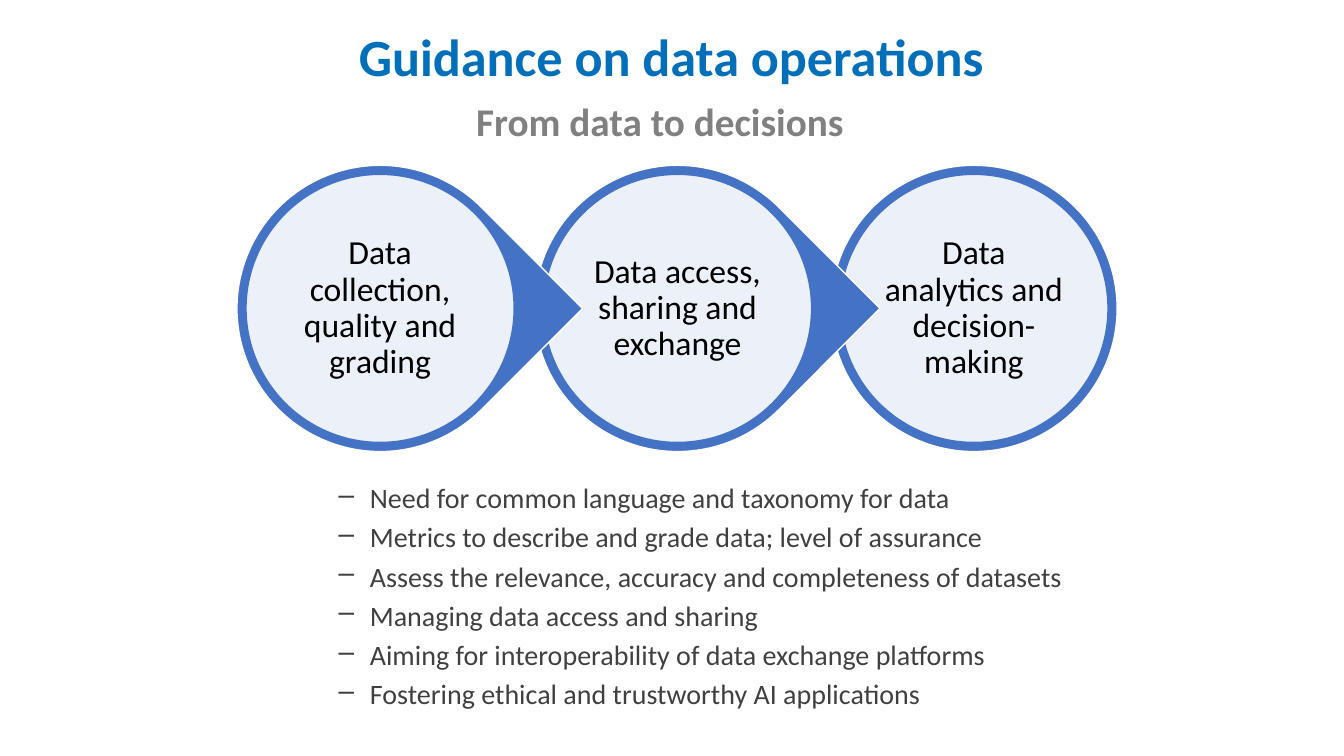
from pptx import Presentation
from pptx.util import Emu, Pt
from pptx.dml.color import RGBColor
from pptx.enum.shapes import MSO_SHAPE
from pptx.enum.text import MSO_ANCHOR, PP_ALIGN
from lxml import etree

PX = 9144  # 100 px to the inch
NS = "{http://schemas.openxmlformats.org/drawingml/2006/main}"


def rgb(code):
    return RGBColor.from_string(code)


def style_text(tf, size, color, bold=False):
    tf.word_wrap = True
    for p in tf.paragraphs:
        for r in p.runs:
            r.font.name = "Calibri"
            r.font.size = Pt(size)
            r.font.bold = bold
            r.font.color.rgb = rgb(color)


prs = Presentation()
prs.slide_width, prs.slide_height = Emu(1333 * PX), Emu(750 * PX)
s = prs.slides.add_slide(prs.slide_layouts[6])

# Title and subtitle
headings = [
    ("Guidance on data operations", (319, 29, 694, 61), 37.3, "006FBA"),
    ("From data to decisions", (453, 92, 403, 61), 28, "808080"),
]
for text, box, size, color in headings:
    tf = s.shapes.add_textbox(*[Emu(v * PX) for v in box]).text_frame
    tf.margin_left = tf.margin_right = tf.margin_top = tf.margin_bottom = 0
    tf.vertical_anchor = MSO_ANCHOR.MIDDLE
    tf.text = text
    tf.paragraphs[0].alignment = PP_ALIGN.CENTER
    tf.paragraphs[0].line_spacing = 0.9
    style_text(tf, size, color, bold=True)

# Three stages, last one at the back so that each tip overlaps the next
STAGE, RIM = 284, 9
stages = [
    (824, MSO_SHAPE.OVAL, "Data analytics and decision-making"),
    (530, MSO_SHAPE.TEAR, "Data access, sharing and exchange"),
    (235, MSO_SHAPE.TEAR, "Data collection, quality and grading"),
]
for left, kind, text in stages:
    discs = [
        (kind, 0, "4472C4", "FFFFFF"),
        (MSO_SHAPE.OVAL, RIM, "FFFFFF", "4472C4"),
    ]
    for shape_kind, inset, fill, line in discs:
        side = Emu((STAGE - 2 * inset) * PX)
        sp = s.shapes.add_shape(shape_kind, Emu((left + inset) * PX),
                                Emu((164 + inset) * PX), side, side)
        sp.shadow.inherit = False
        sp.fill.solid()
        sp.fill.fore_color.rgb = rgb(fill)
        sp.line.color.rgb = rgb(line)
        sp.line.width = Pt(1)
        if shape_kind == MSO_SHAPE.TEAR:
            sp.adjustments[0] = 1
            sp.rotation = 45  # tip points right

    # The inner disc is slightly transparent and holds the label
    disc_color = sp._element.spPr.find(f"{NS}solidFill/{NS}srgbClr")
    etree.SubElement(disc_color, NS + "alpha", val="90000")
    tf = sp.text_frame
    tf.margin_left = tf.margin_right = tf.margin_top = tf.margin_bottom = Emu(3 * PX)
    tf.vertical_anchor = MSO_ANCHOR.MIDDLE
    tf.text = text
    tf.paragraphs[0].alignment = PP_ALIGN.CENTER
    tf.paragraphs[0].line_spacing = 0.9
    style_text(tf, 24, "000000")

# Dashed list
points = [
    "Need for common language and taxonomy for data",
    "Metrics to describe and grade data; level of assurance",
    "Assess the relevance, accuracy and completeness of datasets",
    "Managing data access and sharing",
    "Aiming for interoperability of data exchange platforms",
    "Fostering ethical and trustworthy AI applications",
]
tf = s.shapes.add_textbox(*[Emu(v * PX) for v in (276, 472, 821, 243)]).text_frame
tf.text = "\n".join(points)
for i, p in enumerate(tf.paragraphs):
    pPr = p._p.get_or_add_pPr()
    pPr.set("marL", str(81 * PX))
    pPr.set("indent", str(-31 * PX))
    etree.SubElement(pPr, NS + "buChar", char="–")
    p.space_before = Pt(4 if i else 0)
style_text(tf, 20, "404040")

prs.save("out.pptx")
